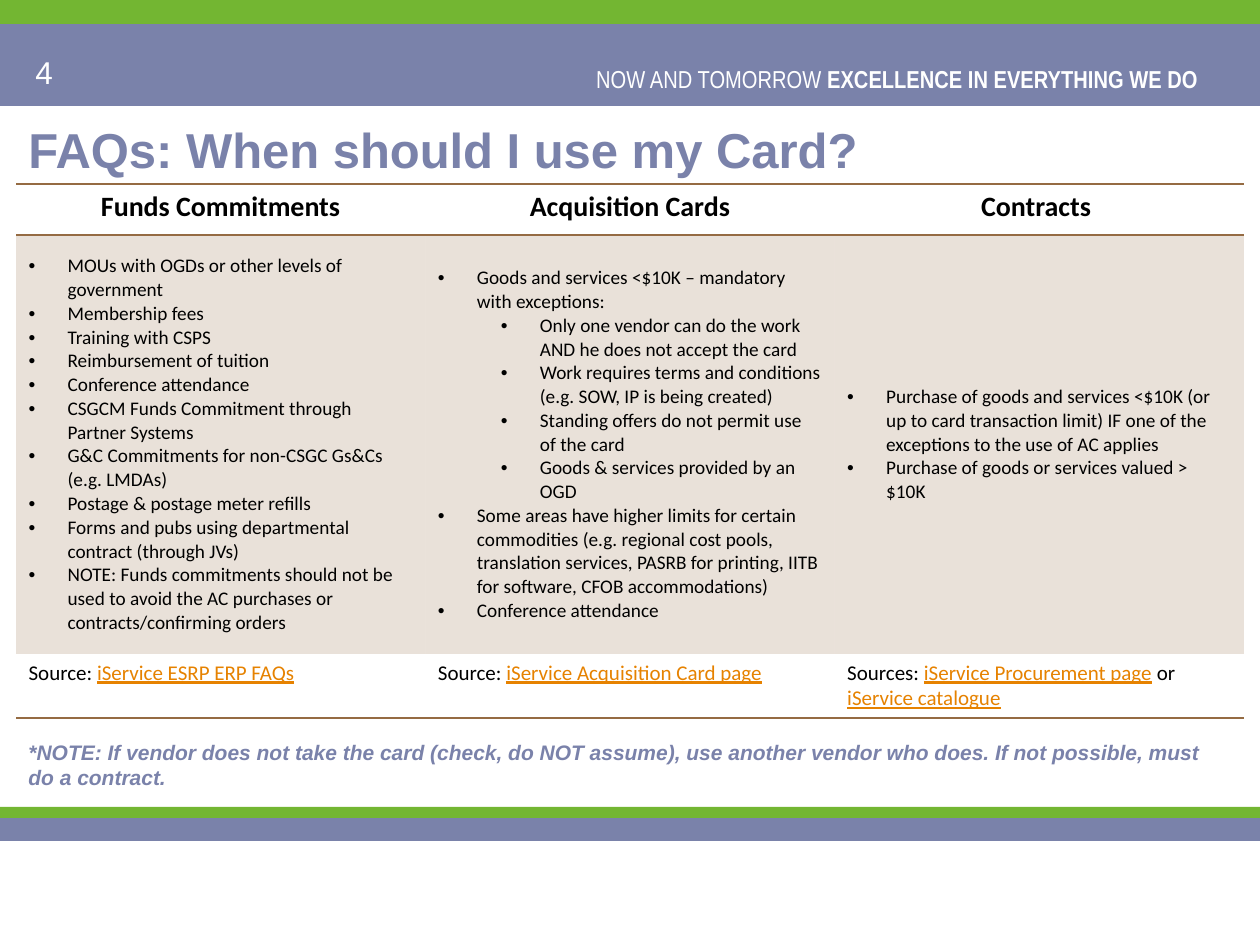
import pptx
import pptx.util
import pptx.dml.color
import pptx.enum.shapes
import pptx.enum.text
import pptx.oxml
import pptx.oxml.ns

# Content
SLATE, GREEN, BROWN = "7A82AA", "73B632", "956B43"
WHITE, BLACK, LINK = "FFFFFF", "000000", "E68200"

BANDS = [  # top, height, colour
    (24, 82, SLATE),
    (0, 24, GREEN),
    (818, 23, SLATE),
    (807, 11, GREEN),
]
PAGE_NUMBER = "4"
SLOGAN = ["NOW AND TOMORROW ", "EXCELLENCE IN EVERYTHING WE DO "]
TITLE = "FAQs: When should I use my Card?"
NOTE = ("*NOTE: If vendor does not take the card (check, do NOT assume), "
        "use another vendor who does. If not possible, must do a contract.")

# Each column: heading, bullets as (level, text), source as (text, is link)
COLUMNS = [
    ("Funds Commitments", [
        (0, "MOUs with OGDs or other levels of government"),
        (0, "Membership fees"),
        (0, "Training with CSPS"),
        (0, "Reimbursement of tuition"),
        (0, "Conference attendance"),
        (0, "CSGCM Funds Commitment through Partner Systems"),
        (0, "G&C Commitments for non-CSGC Gs&Cs (e.g. LMDAs)"),
        (0, "Postage & postage meter refills"),
        (0, "Forms and pubs using departmental contract (through JVs)"),
        (0, "NOTE: Funds commitments should not be used to avoid the AC "
            "purchases or contracts/confirming orders"),
    ], [("Source: ", False), ("iService ESRP ERP FAQs", True)]),
    ("Acquisition Cards", [
        (0, "Goods and services <$10K – mandatory with exceptions:"),
        (1, "Only one vendor can do the work AND he does not accept the card"),
        (1, "Work requires terms and conditions (e.g. SOW, IP is being created)"),
        (1, "Standing offers do not permit use of the card"),
        (1, "Goods & services provided by an OGD"),
        (0, "Some areas have higher limits for certain commodities (e.g. regional "
            "cost pools, translation services, PASRB for printing, IITB for "
            "software, CFOB accommodations)"),
        (0, "Conference attendance"),
    ], [("Source: ", False), ("iService Acquisition Card page", True)]),
    ("Contracts ", [
        (0, "Purchase of goods and services <$10K (or up to card transaction "
            "limit) IF one of the exceptions to the use of AC applies"),
        (0, "Purchase of goods or services valued > $10K"),
    ], [("Sources: ", False), ("iService Procurement page", True),
        (" or ", False), ("iService catalogue", True)]),
]

SLIDE_WIDTH, SLIDE_HEIGHT = 1260, 945
TABLE_LEFT, TABLE_TOP, TABLE_WIDTH = 16, 184, 1228
ROW_HEIGHTS = [51, 419, 64]
BULLET_HANG = 39
LEVEL_INDENTS = [39, 102]

ALIGN = pptx.enum.text.PP_ALIGN
ANCHOR = pptx.enum.text.MSO_ANCHOR


def px(length):
    return pptx.util.Emu(round(length * 914400 / 126))


def color(value):
    return pptx.dml.color.RGBColor.from_string(value)


def add_run(paragraph, text, size, font_name, fill, bold=False, italic=False,
            underline=False):
    run = paragraph.add_run()
    run.text = text
    run.font.size = pptx.util.Pt(size)
    run.font.name = font_name
    run.font.color.rgb = color(fill)
    run.font.bold = bold
    run.font.italic = italic
    run.font.underline = underline


def add_text_box(slide, left, top, width, height, anchor=ANCHOR.TOP):
    box = slide.shapes.add_textbox(px(left), px(top), px(width), px(height))
    box.text_frame.word_wrap = True
    box.text_frame.vertical_anchor = anchor
    return box.text_frame.paragraphs[0]


def add_xml(parent, tag, **attributes):
    child = pptx.oxml.ns.qn(tag)
    element = parent.makeelement(child, attributes)
    parent.append(element)
    return element


def add_bullet(paragraph, level):
    paragraph.level = level
    properties = paragraph._p.get_or_add_pPr()
    properties.set("marL", str(px(LEVEL_INDENTS[level])))
    properties.set("indent", str(-px(BULLET_HANG)))
    add_xml(properties, "a:buFont", typeface="Arial")
    add_xml(properties, "a:buChar", char="•")


def style_cell(cell, ruled_sides, tinted):
    """Draw the borders first, then the fill, as the schema orders them."""
    properties = cell._tc.get_or_add_tcPr()
    for side in "LRTB":
        line = add_xml(properties, "a:ln" + side, w=str(pptx.util.Pt(1)))
        if side in ruled_sides:
            add_xml(add_xml(line, "a:solidFill"), "a:srgbClr", val=BROWN)
        else:
            add_xml(line, "a:noFill")
    if tinted:
        fill = add_xml(properties, "a:solidFill")
        add_xml(add_xml(fill, "a:srgbClr", val=BROWN), "a:alpha", val="20000")
    else:
        cell.fill.background()


def add_card_table(slide):
    frame = slide.shapes.add_table(
        len(ROW_HEIGHTS), len(COLUMNS), px(TABLE_LEFT), px(TABLE_TOP),
        px(TABLE_WIDTH), px(sum(ROW_HEIGHTS)))
    table = frame.table
    table.first_row = table.horz_banding = False
    for row, height in zip(table.rows, ROW_HEIGHTS):
        row.height = px(height)
    for index, (heading, bullets, source) in enumerate(COLUMNS):
        table.columns[index].width = px(TABLE_WIDTH / len(COLUMNS))
        header, body, footer = (table.cell(row, index) for row in range(3))
        style_cell(header, "TB", False)
        style_cell(body, "T", True)
        style_cell(footer, "B", False)

        paragraph = header.text_frame.paragraphs[0]
        paragraph.alignment = ALIGN.CENTER
        add_run(paragraph, heading, 16, "Calibri", BLACK, bold=True)

        body.vertical_anchor = ANCHOR.MIDDLE
        for number, (level, text) in enumerate(bullets):
            text_frame = body.text_frame
            paragraph = text_frame.add_paragraph() if number else text_frame.paragraphs[0]
            add_bullet(paragraph, level)
            add_run(paragraph, text, 11, "Calibri", BLACK)

        for text, is_link in source:
            add_run(footer.text_frame.paragraphs[0], text, 12, "Calibri",
                    LINK if is_link else BLACK, underline=is_link)


def main():
    presentation = pptx.Presentation()
    presentation.slide_width = px(SLIDE_WIDTH)
    presentation.slide_height = px(SLIDE_HEIGHT)
    slide = presentation.slides.add_slide(presentation.slide_layouts[6])

    # Header and footer bands
    for top, height, fill in BANDS:
        band = slide.shapes.add_shape(
            pptx.enum.shapes.MSO_SHAPE.RECTANGLE, 0, px(top), px(SLIDE_WIDTH), px(height))
        band.shadow.inherit = False
        band.fill.solid()
        band.fill.fore_color.rgb = color(fill)
        band.line.fill.background()

    # Slogan and page number
    paragraph = add_text_box(slide, 580, 58, 636, 43)
    paragraph.alignment = ALIGN.RIGHT
    for text, bold in zip(SLOGAN, (False, True)):
        add_run(paragraph, text, 14, "Arial Narrow", WHITE, bold=bold)
    paragraph = add_text_box(slide, 23, 47, 294, 50)
    add_run(paragraph, PAGE_NUMBER, 18, "Arial", WHITE)

    # Title and closing note
    paragraph = add_text_box(slide, 16, 95, 1212, 108, ANCHOR.MIDDLE)
    add_run(paragraph, TITLE, 28, "Arial", SLATE, bold=True)
    paragraph = add_text_box(slide, 16, 733, 1228, 62)
    add_run(paragraph, NOTE, 12, "Arial", SLATE, bold=True, italic=True)

    # Comparison table
    add_card_table(slide)

    presentation.save("out.pptx")


if __name__ == "__main__":
    main()
